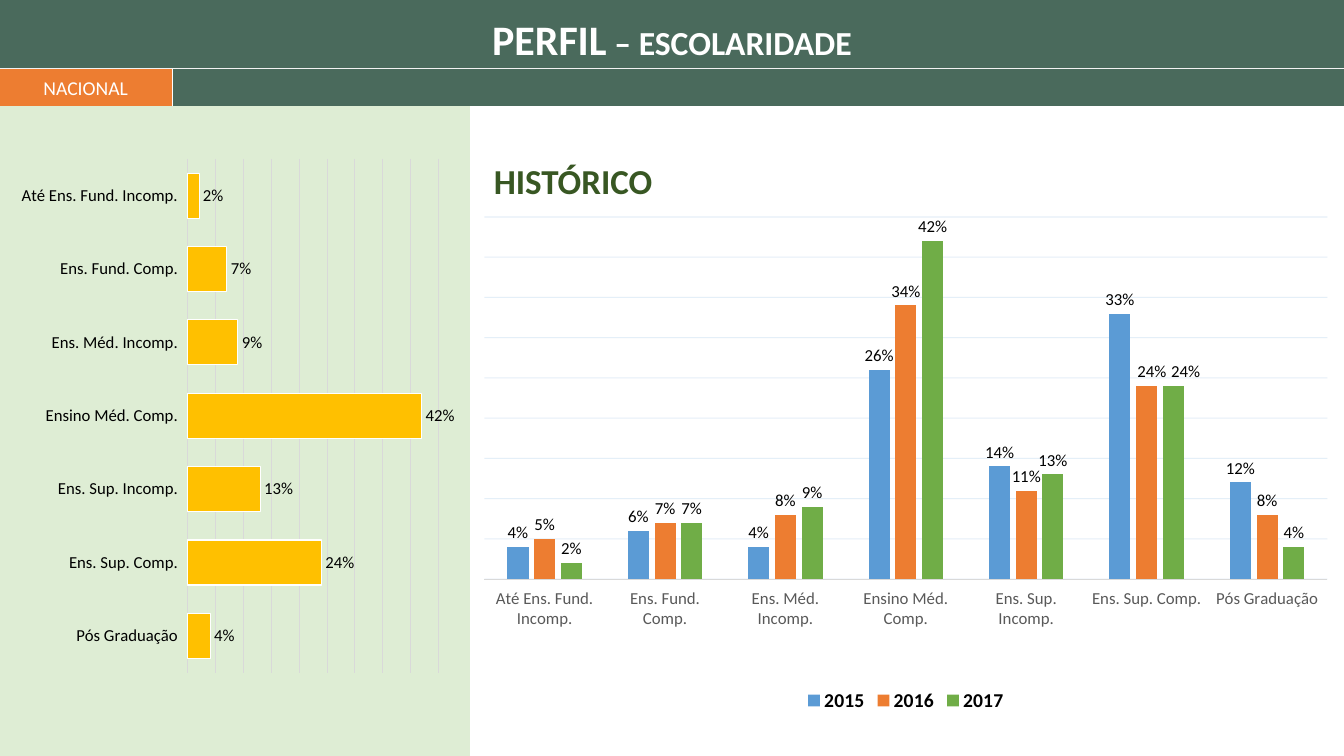
from lxml.etree import SubElement
from pptx import Presentation
from pptx.chart.data import CategoryChartData
from pptx.dml.color import RGBColor
from pptx.enum.chart import XL_CHART_TYPE, XL_LABEL_POSITION, XL_LEGEND_POSITION, XL_TICK_LABEL_POSITION, XL_TICK_MARK
from pptx.enum.shapes import MSO_CONNECTOR, MSO_SHAPE
from pptx.enum.text import MSO_ANCHOR, PP_ALIGN
from pptx.oxml import parse_xml
from pptx.oxml.ns import nsdecls, qn
from pptx.util import Inches, Pt

FONT = "Calibri"
WHITE = RGBColor(0xFF, 0xFF, 0xFF)
BLACK = RGBColor(0, 0, 0)
PALE_GREEN = RGBColor(0xC5, 0xE0, 0xB4)
BAND_GREEN = RGBColor(0x4A, 0x6A, 0x5C)
TITLE_GREEN = RGBColor(0x38, 0x57, 0x23)
ORANGE = RGBColor(0xED, 0x7D, 0x31)
BLUE = RGBColor(0x5B, 0x9B, 0xD5)
GREEN = RGBColor(0x70, 0xAD, 0x47)
GOLD = RGBColor(0xFF, 0xC0, 0x00)
GREY = RGBColor(0x59, 0x59, 0x59)
LIGHT_GREY = RGBColor(0xD9, 0xD9, 0xD9)
OFF_WHITE = RGBColor(0xF2, 0xF2, 0xF2)
PALE_BLUE = RGBColor(0xDE, 0xEB, 0xF7)

LEVELS = ["Até Ens. Fund. Incomp.", "Ens. Fund. Comp.", "Ens. Méd. Incomp.",
          "Ensino Méd. Comp.", "Ens. Sup. Incomp.", "Ens. Sup. Comp.", "Pós Graduação"]
HISTORY = {
    "2015": [0.04, 0.06, 0.04, 0.26, 0.14, 0.33, 0.12],
    "2016": [0.05, 0.07, 0.08, 0.34, 0.11, 0.24, 0.08],
    "2017": [0.02, 0.07, 0.09, 0.42, 0.13, 0.24, 0.04],
}
CURRENT = {"Series 1": HISTORY["2017"]}
LABEL_SHIFTS = {"2016": 0.006, "2017": 0.014}
SHIFTED_LEVEL = LEVELS.index("Ens. Sup. Comp.")

TITLE = [("PERFIL", 30), (" – ESCOLARIDADE", 24)]
RULES = [((1.71, 1.05), (1.71, 0.68), WHITE, 0.5),
         ((-0.01, 0.68), (13.33, 0.68), OFF_WHITE, 1)]


def set_alpha(fill_parent, percent):
    color = next(fill_parent.iter(qn("a:srgbClr")))
    SubElement(color, qn("a:alpha")).set("val", str(percent * 1000))


def add_block(slide, box, color):
    s = slide.shapes.add_shape(MSO_SHAPE.RECTANGLE, *map(Inches, box))
    s.shadow.inherit = False
    s.fill.solid()
    s.fill.fore_color.rgb = color
    s.line.fill.background()
    return s


def style_font(font, size, color, bold=False):
    font.name, font.size, font.bold = FONT, Pt(size), bold
    font.color.rgb = color


def add_text(slide, box, runs, color, align):
    tf = slide.shapes.add_textbox(*map(Inches, box)).text_frame
    tf.word_wrap = True
    p = tf.paragraphs[0]
    p.alignment = align
    style_font(p.font, runs[0][1], color, True)
    for text, size in runs:
        r = p.add_run()
        r.text = text
        r.font.size = Pt(size)


def layout_xml(**values):
    parts = "".join(f'<c:{tag} val="{val}"/>' for tag, val in values.items())
    return parse_xml(f'<c:layout {nsdecls("c")}><c:manualLayout>{parts}</c:manualLayout></c:layout>')


def set_plot_area(chart, x, y, w, h):
    area = chart.plots[0]._element.getparent()
    for old in area.findall(qn("c:layout")):
        area.remove(old)
    area.insert(0, layout_xml(layoutTarget="inner", xMode="edge", yMode="edge", x=x, y=y, w=w, h=h))


def add_percent_chart(slide, kind, box, data, colors, gap, overlap, axis_color, grid_color, area):
    chart_data = CategoryChartData(number_format="0%")
    chart_data.categories = LEVELS
    for name, values in data.items():
        chart_data.add_series(name, values)
    chart = slide.shapes.add_chart(kind, *map(Inches, box), chart_data).chart
    chart.has_title = chart.has_legend = False
    style_font(chart.font, 10, BLACK)

    cat, val = chart.category_axis, chart.value_axis
    cat.major_tick_mark = cat.minor_tick_mark = XL_TICK_MARK.NONE
    cat.tick_label_position = XL_TICK_LABEL_POSITION.LOW
    style_font(cat.tick_labels.font, 12, axis_color)
    cat.format.line.color.rgb = LIGHT_GREY
    cat.format.line.width = Pt(0.75)
    val.visible = False
    val.minimum_scale, val.maximum_scale, val.major_unit = 0, 0.45, 0.05
    val.tick_labels.number_format = "0%"
    val.tick_labels.number_format_is_linked = False
    val.major_gridlines.format.line.color.rgb = grid_color
    val.major_gridlines.format.line.width = Pt(0.75)

    plot = chart.plots[0]
    plot.gap_width, plot.overlap, plot.vary_by_categories = gap, overlap, False
    for series, color in zip(plot.series, colors):
        series.format.fill.solid()
        series.format.fill.fore_color.rgb = color
        series.invert_if_negative = False
        labels = series.data_labels
        labels.show_value = True
        labels.number_format, labels.number_format_is_linked = "0%", False
        labels.position = XL_LABEL_POSITION.OUTSIDE_END
        style_font(labels.font, 12, BLACK)
    set_plot_area(chart, *area)
    return chart


def add_history_chart(slide):
    chart = add_percent_chart(slide, XL_CHART_TYPE.COLUMN_CLUSTERED, (4.64, 2, 8.69, 5.11), HISTORY,
                              (BLUE, ORANGE, GREEN), 219, -27, GREY, PALE_BLUE, (0.019, 0.03, 0.962, 0.703))
    set_alpha(chart.value_axis.major_gridlines._xAx.find(qn("c:majorGridlines")), 78)
    chart.has_legend = True
    chart.legend.position = XL_LEGEND_POSITION.BOTTOM
    chart.legend.include_in_layout = False
    style_font(chart.legend.font, 14, BLACK, True)
    for series in chart.plots[0].series:
        if series.name in LABEL_SHIFTS:
            label = series.points[SHIFTED_LEVEL].data_label
            style_font(label.font, 12, BLACK)
            label.position = XL_LABEL_POSITION.OUTSIDE_END
            idx = series._element.find(".//" + qn("c:dLbl")).find(qn("c:idx"))
            idx.addnext(layout_xml(x=LABEL_SHIFTS[series.name], y=0))


def add_current_chart(slide):
    chart = add_percent_chart(slide, XL_CHART_TYPE.BAR_CLUSTERED, (0.21, 1.47, 4.3, 5.31), CURRENT,
                              (GOLD,), 63, -70, BLACK, LIGHT_GREY, (0.386, 0.02, 0.58, 0.96))
    chart.category_axis.reverse_order = True
    line = chart.plots[0].series[0].format.line
    line.color.rgb, line.width = WHITE, Pt(0.75)


def main():
    """Build the schooling profile slide."""
    prs = Presentation()
    prs.slide_width, prs.slide_height = Inches(13.33), Inches(7.5)
    slide = prs.slides.add_slide(prs.slide_layouts[6])

    panel = add_block(slide, (0, 0, 4.66, 7.5), PALE_GREEN)
    set_alpha(panel._element.spPr, 56)
    add_block(slide, (-0.01, 0, 13.34, 1.05), BAND_GREEN)
    add_text(slide, (0, 0.08, 13.33, 0.61), TITLE, WHITE, PP_ALIGN.CENTER)

    tab = add_block(slide, (-0.01, 0.68, 1.72, 0.37), ORANGE)
    tab.text_frame.vertical_anchor = MSO_ANCHOR.MIDDLE
    p = tab.text_frame.paragraphs[0]
    p.text, p.alignment = "NACIONAL", PP_ALIGN.CENTER
    style_font(p.font, 14, WHITE)

    for start, end, color, width in RULES:
        rule = slide.shapes.add_connector(MSO_CONNECTOR.STRAIGHT, *map(Inches, start + end))
        rule.line.color.rgb, rule.line.width = color, Pt(width)
        SubElement(rule._element.spPr, qn("a:effectLst"))

    add_history_chart(slide)
    add_current_chart(slide)
    add_text(slide, (4.8, 1.53, 7.1, 0.52), [("HISTÓRICO", 25)], TITLE_GREEN, PP_ALIGN.LEFT)
    prs.save("out.pptx")


if __name__ == "__main__":
    main()
